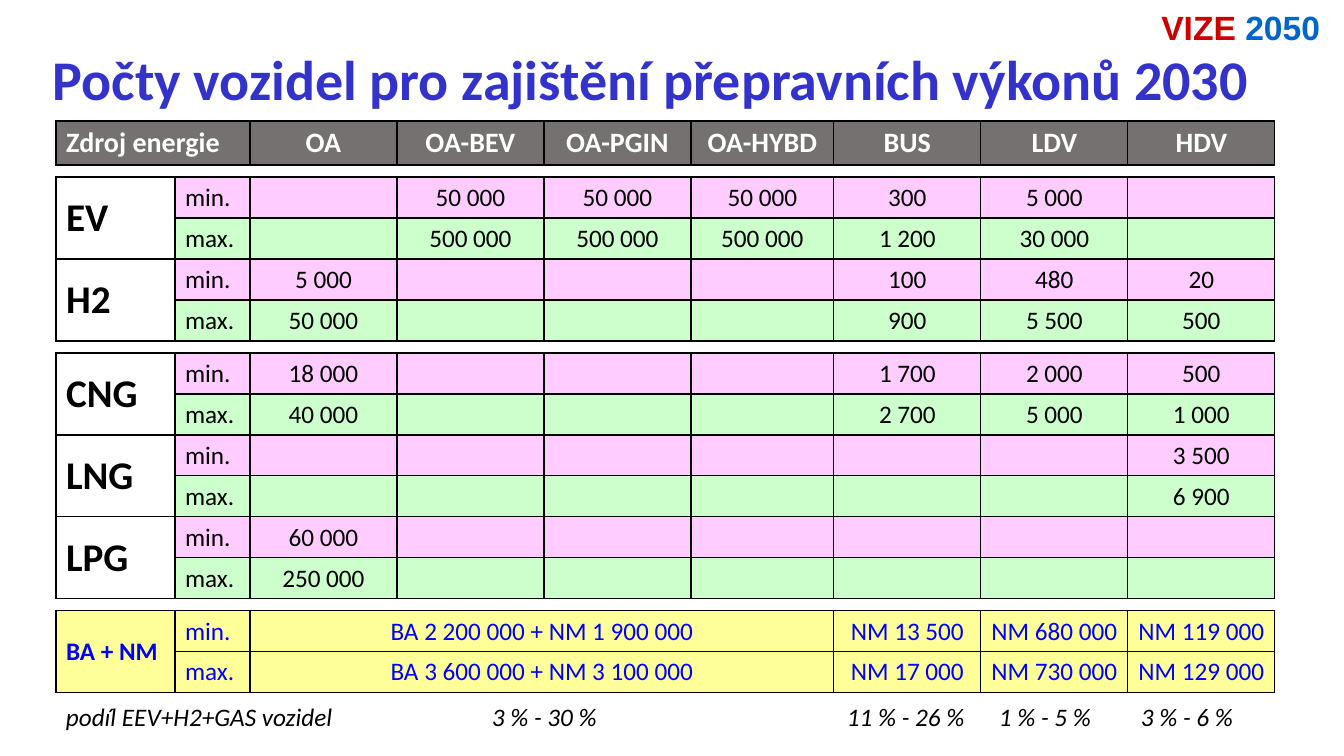
"""Build the slide on vehicle counts by energy source for 2030."""
from dataclasses import dataclass

from lxml import etree
from pptx import Presentation
from pptx.dml.color import RGBColor
from pptx.enum.text import MSO_ANCHOR, PP_ALIGN
from pptx.oxml.ns import qn
from pptx.util import Emu, Pt

LEFT, MID, RIGHT = PP_ALIGN.LEFT, PP_ALIGN.CENTER, PP_ALIGN.RIGHT
CENTER = MSO_ANCHOR.MIDDLE


@dataclass(frozen=True)
class Theme:
    """Colours, fonts and type sizes."""
    body: str = "Calibri"
    brand: str = "Arial"
    black: str = "000000"
    white: str = "FFFFFF"
    title: str = "3333CC"
    red: str = "CC0000"
    blue: str = "0066CC"
    link: str = "0000FF"
    head: str = "767171"
    low: str = "FFCCFF"
    high: str = "CCFFCC"
    fuel: str = "FFFF99"
    huge: int = 40
    large: int = 28
    mark: int = 24
    medium: int = 20
    small: int = 18
    tiny: int = 1


def px(num):
    """Turn pixels into EMU."""
    return Emu(round(num * 914400 / 100.8))


class Deck:
    """Style and current slide, with a method for each kind of element."""

    def __init__(self, theme):
        """Open a blank slide."""
        self.theme = theme
        self.file = Presentation()
        self.file.slide_width, self.file.slide_height = px(1344), px(756)
        self.slide = self.file.slides.add_slide(self.file.slide_layouts[6])

    def font(self, font, size, color, bold=False, italic=False, face=None):
        """Set the look of a font."""
        font.name, font.size = face or self.theme.body, Pt(size)
        font.bold, font.italic = bold, italic
        font.color.rgb = RGBColor.from_string(color)

    def text(self, box):
        """Add a wrapping text box and return its first paragraph."""
        frame = self.slide.shapes.add_textbox(*map(px, box)).text_frame
        frame.word_wrap = True
        return frame.paragraphs[0]

    def line(self, box, words, size, color, **look):
        """Add a text box in one style."""
        para = self.text(box)
        para.text = words
        self.font(para.font, size, color, **look)
        return para

    def mark(self, box, parts):
        """Add a right-aligned line of coloured words."""
        para = self.text(box)
        para.alignment, para.line_spacing = RIGHT, 0.9
        para.space_before = Pt(10)
        for words, color in parts:
            run = para.add_run()
            run.text = words
            self.font(run.font, self.theme.mark, color, True,
                      face=self.theme.brand)

    def tabs(self, para, stops):
        """Give a paragraph left tab stops."""
        props = para._p.get_or_add_pPr()
        tabs = etree.Element(qn("a:tabLst"))
        for stop in stops:
            etree.SubElement(tabs, qn("a:tab"), pos=str(px(stop)), algn="l")
        props.insert(0, tabs)

    def grid(self, left, top, cols, rows):
        """Add a plain table of the given column widths and row heights."""
        table = self.slide.shapes.add_table(
            len(rows), len(cols), px(left), px(top),
            px(sum(cols)), px(sum(rows))).table
        table.first_row = table.horz_banding = False
        for items, sizes in ((table.columns, cols), (table.rows, rows)):
            for item, size in zip(items, sizes):
                if items is table.columns:
                    item.width = px(size)
                else:
                    item.height = px(size)
        return table

    def edges(self, cell, sides):
        """Draw the named sides of a cell and clear the others."""
        props = cell._tc.get_or_add_tcPr()
        for side in "LRTB":
            edge = etree.SubElement(props, qn(f"a:ln{side}"), w=str(Pt(1)))
            if side in sides:
                fill = etree.SubElement(edge, qn("a:solidFill"))
                etree.SubElement(fill, qn("a:srgbClr"), val=self.theme.black)
            else:
                etree.SubElement(edge, qn("a:noFill"))

    def cell(self, cell, words, fill, size, color, bold=False, align=MID,
             sides="LRTB"):
        """Fill and style one table cell."""
        self.edges(cell, sides)
        if fill:
            cell.fill.solid()
            cell.fill.fore_color.rgb = RGBColor.from_string(fill)
        else:
            cell.fill.background()
        cell.vertical_anchor = CENTER
        para = cell.text_frame.paragraphs[0]
        para.text, para.alignment = words, align
        self.font(para.font, size, color, bold)
        if not words:
            etree.SubElement(para._p, qn("a:endParaRPr"), sz=str(size * 100))


HEAD = ["Zdroj energie", "", "OA", "OA-BEV", "OA-PGIN", "OA-HYBD",
        "BUS", "LDV", "HDV"]
GROUPS = [
    [("EV", ["", *["50 000"] * 3, "300", "5 000", ""],
      ["", *["500 000"] * 3, "1 200", "30 000", ""]),
     ("H2", ["5 000", "", "", "", "100", "480", "20"],
      ["50 000", "", "", "", "900", "5 500", "500"])],
    [("CNG", ["18 000", "", "", "", "1 700", "2 000", "500"],
      ["40 000", "", "", "", "2 700", "5 000", "1 000"]),
     ("LNG", [""] * 6 + ["3 500"], [""] * 6 + ["6 900"]),
     ("LPG", ["60 000"] + [""] * 6, ["250 000"] + [""] * 6)],
    [("BA + NM",
      ["BA 2 200 000 + NM 1 900 000", "", "", "",
       "NM 13 500", "NM 680 000", "NM 119 000"],
      ["BA 3 600 000 + NM 3 100 000", "", "", "",
       "NM 17 000", "NM 730 000", "NM 129 000"])],
]
COLS = [119, 75, 147, 147, 147, 143, 147, 147, 147]
SHARES = ["podíl EEV+H2+GAS vozidel", "3 % - 30 %", "11 % - 26 %",
          "1 % - 5 %", "3 % - 6 %"]


def counts(deck):
    """Add the table of vehicle counts."""
    theme = deck.theme
    rows = [44]
    for group in GROUPS:
        rows += [12] + [41] * 2 * len(group)
    table = deck.grid(56, 121, COLS, rows)
    for col, words in enumerate(HEAD):
        deck.cell(table.cell(0, col), words, theme.head, theme.medium,
                  theme.white, True, MID if col else LEFT)
    table.cell(0, 0).merge(table.cell(0, 1))
    row = 1
    for group in GROUPS:
        for col in range(len(COLS)):
            deck.cell(table.cell(row, col), "", None, theme.tiny,
                      theme.black, sides="TB")
        row += 1
        for name, low, high in group:
            fuel = group is GROUPS[-1]
            color = theme.link if fuel else theme.black
            kinds = (("min.", low, theme.low), ("max.", high, theme.high))
            for step, (kind, nums, tint) in enumerate(kinds):
                fill = theme.fuel if fuel else tint
                deck.cell(table.cell(row + step, 0), "" if step else name,
                          theme.fuel if fuel else None,
                          theme.small if fuel else theme.large,
                          color, True, LEFT)
                for col, words in enumerate([kind, *nums], 1):
                    deck.cell(table.cell(row + step, col), words, fill,
                              theme.small, color,
                              align=LEFT if col == 1 else MID)
                if fuel:
                    table.cell(row + step, 2).merge(table.cell(row + step, 5))
            table.cell(row, 0).merge(table.cell(row + 1, 0))
            row += 2


def main():
    """Build and save the slide."""
    theme = Theme()
    deck = Deck(theme)
    deck.mark((1139, 7, 191, 47),
              [("VIZE ", theme.red), ("2050", theme.blue)])
    deck.line((43, 40, 1240, 78),
              "Počty vozidel pro zajištění přepravních výkonů 2030",
              theme.huge, theme.title, bold=True)
    counts(deck)
    note = deck.line((56, 696, 1219, 40), "\t".join(SHARES),
                     theme.small, theme.black, italic=True)
    deck.tabs(note, (426, 781, 933, 1075))
    deck.file.save("out.pptx")


if __name__ == "__main__":
    main()
